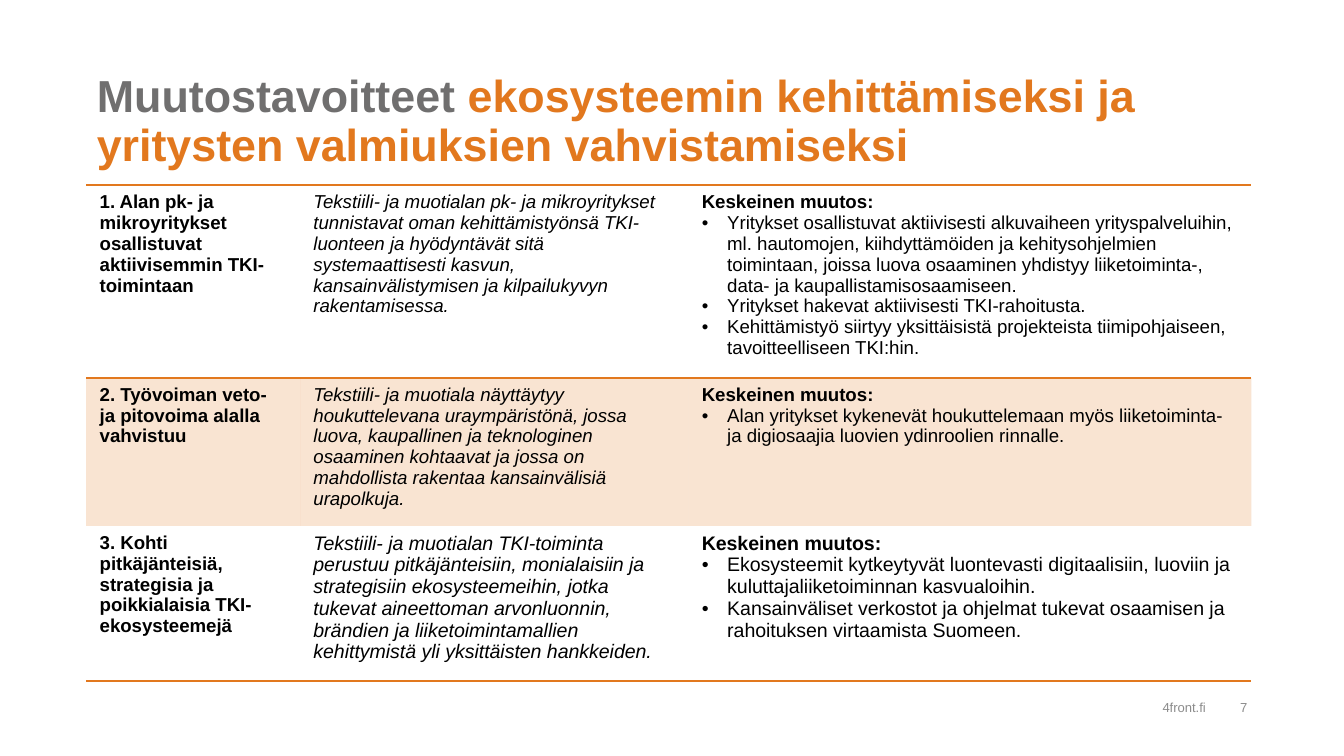
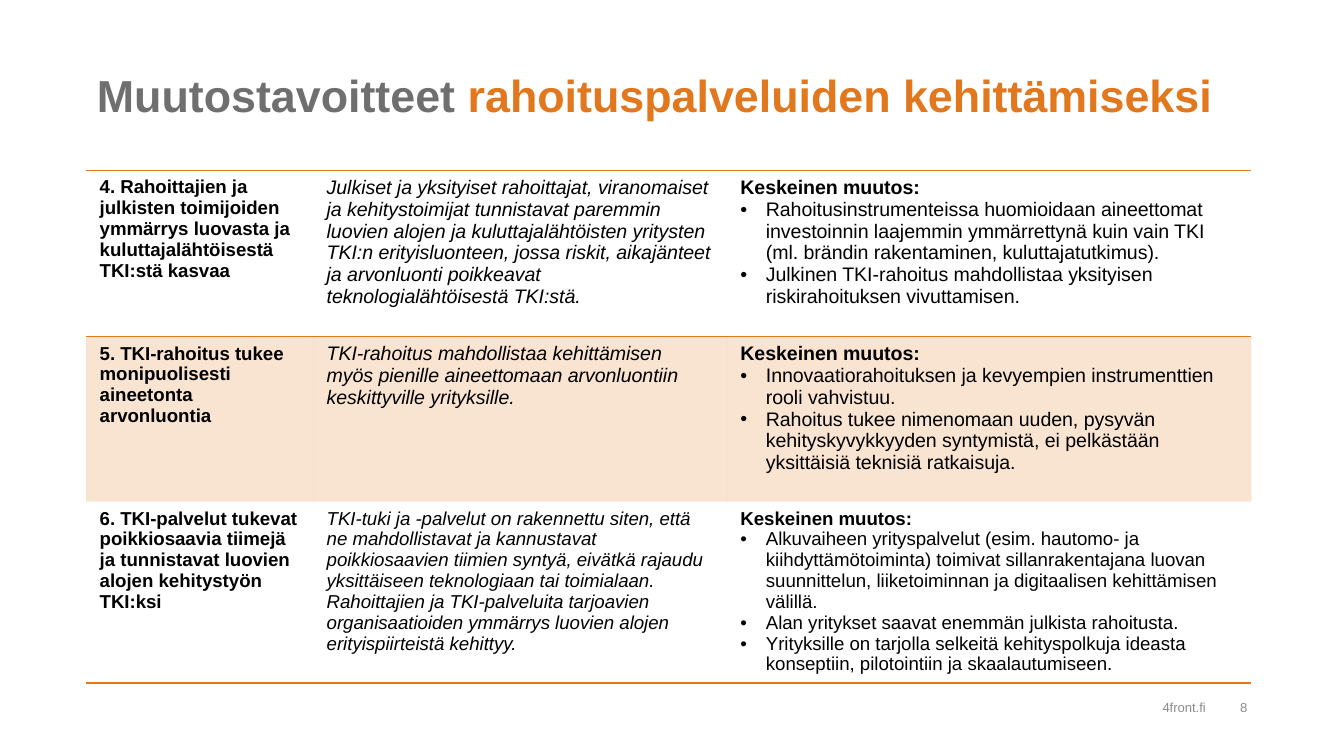
from lxml import etree
from pptx import Presentation
from pptx.dml.color import RGBColor
from pptx.enum.text import MSO_ANCHOR, MSO_AUTO_SIZE, PP_ALIGN
from pptx.oxml.ns import qn
from pptx.util import Cm, Pt

LEFT, RIGHT = PP_ALIGN.LEFT, PP_ALIGN.RIGHT
TOP, MIDDLE = MSO_ANCHOR.TOP, MSO_ANCHOR.MIDDLE
NO_FIT = MSO_AUTO_SIZE.NONE

FONT = "Arial"
BLACK, ORANGE, GREY, PALE = "000000", "E2781E", "706F6F", "8C8C8C"
NO_GRID = "{2D5ABB26-0587-4C30-8999-92F81FD0307C}"
SITE = "4front.fi"
LEAD = "Muutostavoitteet "
HEAD = "Keskeinen muutos:"


def color(code):
    return RGBColor.from_string(code)


def add_node(parent, tag, **attrs):
    return etree.SubElement(parent, qn(tag), attrs)


class Deck:
    def __init__(self):
        self.prs = Presentation()
        self.prs.slide_width, self.prs.slide_height = Cm(25.4), Cm(14.29)
        self.slide = None

    def start(self, number, topic):
        self.slide = self.prs.slides.add_slide(self.prs.slide_layouts[5])
        self.title(topic)
        self.label(SITE, 14.2, 8.59, RIGHT)
        self.label(str(number), 23.44, 1.4, LEFT)

    def run(self, para, text, size, code, bold=False, italic=False):
        font_run = para.add_run()
        font_run.text = text
        font = font_run.font
        font.name, font.size = FONT, Pt(size)
        font.bold, font.italic = bold, italic
        font.color.rgb = color(code)

    def frame(self, shape, anchor):
        frame = shape.text_frame
        frame.word_wrap = True
        frame.auto_size = NO_FIT
        frame.vertical_anchor = anchor
        frame.margin_left = frame.margin_right = 0
        frame.margin_top = frame.margin_bottom = 0
        return frame.paragraphs[0]

    def title(self, topic):
        shape = self.slide.shapes.title
        shape.left, shape.top = Cm(1.83), Cm(1.4)
        shape.width, shape.height = Cm(21.82), Cm(2.11)
        para = self.frame(shape, TOP)
        para.alignment = LEFT
        para.line_spacing = 0.9
        self.run(para, LEAD, 24, GREY, bold=True)
        self.run(para, topic, 24, ORANGE, bold=True)

    def label(self, text, left, width, align):
        box = self.slide.shapes.add_textbox(
            Cm(left), Cm(13.16), Cm(width), Cm(0.43))
        para = self.frame(box, MIDDLE)
        para.alignment = align
        self.run(para, text, 7, PALE)

    def bullet(self, para):
        props = para._p.get_or_add_pPr()
        props.set("marL", str(Cm(0.48)))
        props.set("indent", str(-Cm(0.48)))
        add_node(props, "a:buFont", typeface=FONT)
        add_node(props, "a:buChar", char="•")

    def tint(self, cell):
        cell.fill.solid()
        cell.fill.fore_color.rgb = color(ORANGE)
        hue = cell._tc.tcPr.find(".//" + qn("a:srgbClr"))
        add_node(hue, "a:alpha", val="20000")

    def border(self, cell, sides):
        props = cell._tc.get_or_add_tcPr()
        for spot, side in enumerate(sides):
            line = etree.Element(qn("a:ln" + side), w=str(Pt(1)))
            fill = add_node(line, "a:solidFill")
            add_node(fill, "a:srgbClr", val=ORANGE)
            props.insert(spot, line)

    def table(self, top, widths, heights, goals):
        shape = self.slide.shapes.add_table(
            len(goals), len(widths), Cm(1.63), Cm(top),
            Cm(sum(widths)), Cm(sum(heights)))
        table = shape.table
        table.first_row = table.horz_banding = False
        table._tbl.tblPr.find(qn("a:tableStyleId")).text = NO_GRID
        for col, width in zip(table.columns, widths):
            col.width = Cm(width)
        for row, height in zip(table.rows, heights):
            row.height = Cm(height)
        for index, (size, name, aim, items) in enumerate(goals):
            cells = table.rows[index].cells
            for cell in cells:
                if index == 1:
                    self.tint(cell)
                else:
                    cell.fill.background()
                    self.border(cell, "TB" if index == 0 else "B")
            first, second, third = [
                cell.text_frame.paragraphs[0] for cell in cells]
            self.run(first, name, 10, BLACK, bold=True)
            self.run(second, aim, size, BLACK, italic=True)
            self.run(third, HEAD, size, BLACK, bold=True)
            for item in items:
                para = cells[2].text_frame.add_paragraph()
                self.bullet(para)
                self.run(para, item, size, BLACK)


GROWTH = [
    (10, "1. Alan pk- ja mikroyritykset osallistuvat aktiivisemmin "
     "TKI-toimintaan",
     "Tekstiili- ja muotialan pk- ja mikroyritykset tunnistavat oman "
     "kehittämistyönsä TKI-luonteen ja hyödyntävät sitä systemaattisesti "
     "kasvun, kansainvälistymisen ja kilpailukyvyn rakentamisessa.",
     ["Yritykset osallistuvat aktiivisesti alkuvaiheen yrityspalveluihin, "
      "ml. hautomojen, kiihdyttämöiden ja kehitysohjelmien toimintaan, "
      "joissa luova osaaminen yhdistyy liiketoiminta-, data- ja "
      "kaupallistamisosaamiseen.",
      "Yritykset hakevat aktiivisesti TKI-rahoitusta.",
      "Kehittämistyö siirtyy yksittäisistä projekteista tiimipohjaiseen, "
      "tavoitteelliseen TKI:hin."]),
    (10, "2. Työvoiman veto- ja pitovoima alalla vahvistuu",
     "Tekstiili- ja muotiala näyttäytyy houkuttelevana uraympäristönä, "
     "jossa luova, kaupallinen ja teknologinen osaaminen kohtaavat ja "
     "jossa on mahdollista rakentaa kansainvälisiä urapolkuja.",
     ["Alan yritykset kykenevät houkuttelemaan myös liiketoiminta- ja "
      "digiosaajia luovien ydinroolien rinnalle."]),
    (10.5, "3. Kohti pitkäjänteisiä, strategisia ja poikkialaisia "
     "TKI-ekosysteemejä",
     "Tekstiili- ja muotialan TKI-toiminta perustuu pitkäjänteisiin, "
     "monialaisiin ja strategisiin ekosysteemeihin, jotka tukevat "
     "aineettoman arvonluonnin, brändien ja liiketoimintamallien "
     "kehittymistä yli yksittäisten hankkeiden.",
     ["Ekosysteemit kytkeytyvät luontevasti digitaalisiin, luoviin ja "
      "kuluttajaliiketoiminnan kasvualoihin.",
      "Kansainväliset verkostot ja ohjelmat tukevat osaamisen ja "
      "rahoituksen virtaamista Suomeen."]),
]

FUNDING = [
    (10.5, "4. Rahoittajien ja julkisten toimijoiden ymmärrys luovasta ja "
     "kuluttajalähtöisestä TKI:stä kasvaa",
     "Julkiset ja yksityiset rahoittajat, viranomaiset ja kehitystoimijat "
     "tunnistavat paremmin luovien alojen ja kuluttajalähtöisten yritysten "
     "TKI:n erityisluonteen, jossa riskit, aikajänteet ja arvonluonti "
     "poikkeavat teknologialähtöisestä TKI:stä.",
     ["Rahoitusinstrumenteissa huomioidaan aineettomat investoinnin "
      "laajemmin ymmärrettynä kuin vain TKI (ml. brändin rakentaminen, "
      "kuluttajatutkimus).",
      "Julkinen TKI-rahoitus mahdollistaa yksityisen riskirahoituksen "
      "vivuttamisen."]),
    (10.5, "5. TKI-rahoitus tukee monipuolisesti aineetonta arvonluontia",
     "TKI-rahoitus mahdollistaa kehittämisen myös pienille aineettomaan "
     "arvonluontiin keskittyville yrityksille.",
     ["Innovaatiorahoituksen ja kevyempien instrumenttien rooli vahvistuu.",
      "Rahoitus tukee nimenomaan uuden, pysyvän kehityskyvykkyyden "
      "syntymistä, ei pelkästään yksittäisiä teknisiä ratkaisuja."]),
    (10, "6. TKI-palvelut tukevat poikkiosaavia tiimejä ja tunnistavat "
     "luovien alojen kehitystyön TKI:ksi",
     "TKI-tuki ja -palvelut on rakennettu siten, että ne mahdollistavat ja "
     "kannustavat poikkiosaavien tiimien syntyä, eivätkä rajaudu "
     "yksittäiseen teknologiaan tai toimialaan. Rahoittajien ja "
     "TKI-palveluita tarjoavien organisaatioiden ymmärrys luovien alojen "
     "erityispiirteistä kehittyy.",
     ["Alkuvaiheen yrityspalvelut (esim. hautomo- ja kiihdyttämötoiminta) "
      "toimivat sillanrakentajana luovan suunnittelun, liiketoiminnan ja "
      "digitaalisen kehittämisen välillä.",
      "Alan yritykset saavat enemmän julkista rahoitusta.",
      "Yrityksille on tarjolla selkeitä kehityspolkuja ideasta "
      "konseptiin, pilotointiin ja skaalautumiseen."]),
]


def main():
    deck = Deck()
    deck.start(7, "ekosysteemin kehittämiseksi ja yritysten valmiuksien "
               "vahvistamiseksi")
    deck.table(3.5, [4.04, 7.34, 10.64], [3.64, 2.8, 2.93], GROWTH)
    deck.start(8, "rahoituspalveluiden kehittämiseksi")
    deck.table(3.22, [4.29, 7.82, 9.91], [3.14, 3.12, 3.43], FUNDING)
    deck.prs.save("out.pptx")


if __name__ == "__main__":
    main()
